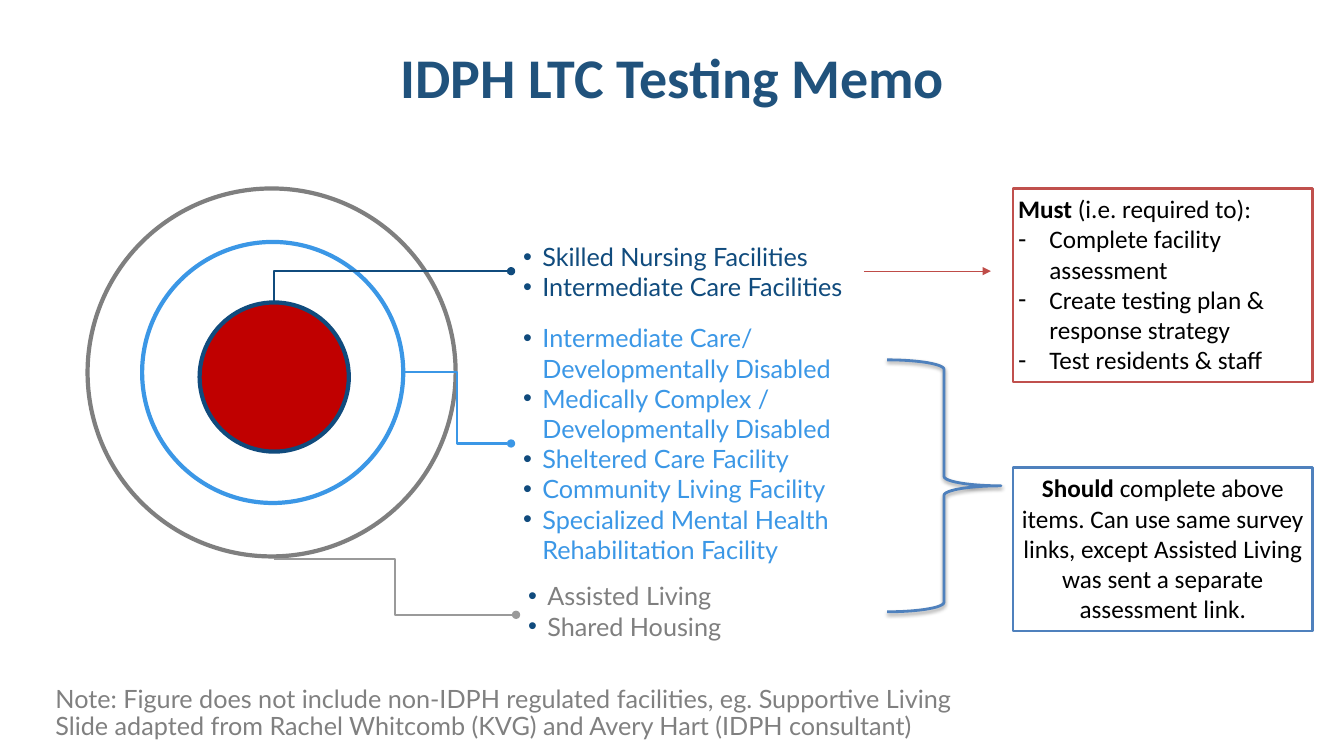
from pptx import Presentation
from pptx.dml.color import RGBColor
from pptx.enum.shapes import MSO_CONNECTOR, MSO_SHAPE
from pptx.enum.text import MSO_ANCHOR, MSO_AUTO_SIZE, PP_ALIGN
from pptx.oxml.ns import qn
from pptx.util import Inches, Pt
from lxml.etree import SubElement

WIDTH, HEIGHT = Inches(13.33), Inches(7.5)
COLORS = {
    "title": "20527C", "navy": "104B7D", "sky": "3B97E6", "gray": "7F7F7F",
    "pale": "9A9A9A", "note": "808080", "core": "C00000", "arrow": "BF4C48",
    "must": "C0504D", "should": "4F81BD", "black": "000000", "white": "FFFFFF",
}
LABEL_LEFT, SIDE_LEFT, SIDE_WIDTH = 38.03, 75.38, 22.28
CENTER, SKILLED_LEVEL = 20.4, 35.87


def color(name):
    return RGBColor.from_string(COLORS[name])


def across(percent):
    return round(WIDTH * percent / 100)


def down(percent):
    return round(HEIGHT * percent / 100)


def place(left, top, width, height):
    return across(left), down(top), across(width), down(height)


def add_outline(page, kind, area, line, weight, fill=None):
    shape = page.shapes.add_shape(kind, *area)
    shape.shadow.inherit = False
    if fill:
        shape.fill.solid()
        shape.fill.fore_color.rgb = color(fill)
    else:
        shape.fill.background()
    shape.line.color.rgb = color(line)
    shape.line.width = Pt(weight)
    return shape


def add_ring(page, center, middle, diameter, line, fill=None):
    size = down(diameter)
    area = across(center) - size // 2, down(middle) - size // 2, size, size
    add_outline(page, MSO_SHAPE.OVAL, area, line, 3, fill)


def add_line(page, kind, start, finish, line, weight, **ends):
    connector = page.shapes.add_connector(
        kind, across(start[0]), down(start[1]), across(finish[0]), down(finish[1]))
    connector.line.color.rgb = color(line)
    connector.line.width = Pt(weight)
    for end, style in ends.items():
        SubElement(connector.line._get_or_add_ln(), qn(f"a:{end}End"), type=style)
    SubElement(connector.element.spPr, qn("a:effectLst"))
    return connector


def set_frame(shape, anchor, insets, grow=True):
    frame = shape.text_frame
    frame.word_wrap = True
    frame.auto_size = MSO_AUTO_SIZE.SHAPE_TO_FIT_TEXT if grow else MSO_AUTO_SIZE.NONE
    frame.vertical_anchor = anchor
    (frame.margin_left, frame.margin_top,
     frame.margin_right, frame.margin_bottom) = [Inches(inset) for inset in insets]
    return frame


def add_bullet(para, mark, indent, tint=None):
    properties = para._p.get_or_add_pPr()
    properties.set("marL", str(Inches(indent)))
    properties.set("indent", str(-Inches(indent)))
    if tint:
        SubElement(SubElement(properties, qn("a:buClr")), qn("a:srgbClr"), val=COLORS[tint])
    SubElement(properties, qn("a:buFont"), typeface="Arial")
    SubElement(properties, qn("a:buChar"), char=mark)


def add_spans(para, spans, font, tint, size=18):
    for text, bold in spans:
        span = para.add_run()
        span.text = text
        span.font.name = font
        span.font.size = Pt(size)
        span.font.bold = bold
        span.font.color.rgb = color(tint)


def next_para(frame, index):
    return frame.add_paragraph() if index else frame.paragraphs[0]


def add_title(page, text):
    box = page.shapes.add_textbox(*place(5.18, 4.4, 89.7, 11.33))
    para = set_frame(box, MSO_ANCHOR.MIDDLE, [0.05] * 4, grow=False).paragraphs[0]
    para.alignment = PP_ALIGN.CENTER
    add_spans(para, [(text, True)], "Calibri", "title", 40)


def add_facilities(page, area, names, tint):
    box = page.shapes.add_textbox(*place(*area))
    frame = set_frame(box, MSO_ANCHOR.MIDDLE, (0.12, 0, 0, 0))
    for index, name in enumerate(names):
        para = next_para(frame, index)
        para.level = 1
        add_bullet(para, "•", 0.19, "navy")
        add_spans(para, [(name, False)], "Lato", tint)


def add_duty(page, top, height, line, lead, rest, alignment, tasks=()):
    area = place(SIDE_LEFT, top, SIDE_WIDTH, height)
    box = add_outline(page, MSO_SHAPE.RECTANGLE, area, line, 2, "white")
    frame = set_frame(box, MSO_ANCHOR.TOP, [0.05] * 4)
    para = frame.paragraphs[0]
    para.alignment = alignment
    add_spans(para, [(lead, True), (rest, False)], "Calibri", "black")
    for task in tasks:
        para = frame.add_paragraph()
        para.alignment = alignment
        add_bullet(para, "-", 0.31)
        add_spans(para, [(task, False)], "Calibri", "black")


def add_brace(page, area, line):
    brace = add_outline(page, MSO_SHAPE.RIGHT_BRACE, place(*area), line, 2)
    effects = brace.element.spPr.find(qn("a:effectLst"))
    shadow = SubElement(effects, qn("a:outerShdw"), blurRad=str(Pt(3)), dist=str(Pt(1.6)),
                        dir="5400000", rotWithShape="0")
    tint = SubElement(shadow, qn("a:srgbClr"), val=COLORS["black"])
    SubElement(tint, qn("a:alpha"), val="38000")


def add_note(page, lines):
    box = page.shapes.add_textbox(*place(4.13, 90.67, 71.25, 7.33))
    frame = set_frame(box, MSO_ANCHOR.BOTTOM, [0] * 4)
    for index, text in enumerate(lines):
        para = next_para(frame, index)
        para.line_spacing = 0.9
        add_spans(para, [(text, False)], "Lato", "note")


def main():
    deck = Presentation()
    deck.slide_width, deck.slide_height = WIDTH, HEIGHT
    page = deck.slides.add_slide(deck.slide_layouts[6])

    add_ring(page, 20.21, 49.27, 48.67, "gray")
    add_title(page, "IDPH LTC Testing Memo")
    add_ring(page, 20.29, 49.27, 34.53, "sky")
    add_ring(page, CENTER, 49.87, 19.73, "navy", "core")

    elbow = MSO_CONNECTOR.ELBOW
    add_line(page, elbow, (LABEL_LEFT, 58.67), (30, 49.2), "sky", 1.5, head="oval")
    add_facilities(page, (LABEL_LEFT, 42.53, 30.53, 32.27), [
        "Intermediate Care/ Developmentally Disabled",
        "Medically Complex / Developmentally Disabled",
        "Sheltered Care Facility",
        "Community Living Facility",
        "Specialized Mental Health Rehabilitation Facility",
    ], "sky")
    add_facilities(page, (LABEL_LEFT, 31.87, 28.65, 8.13), [
        "Skilled Nursing Facilities", "Intermediate Care Facilities"], "navy")
    corner = add_line(page, elbow, (LABEL_LEFT, SKILLED_LEVEL), (CENTER, 40),
                      "navy", 1.5, head="oval")
    corner.element.spPr.find(qn("a:prstGeom")).set("prst", "bentConnector2")
    add_facilities(page, (38.4, 78.27, 17.48, 5.07), [
        "Assisted Living", "Shared Housing"], "gray")
    add_line(page, elbow, (CENTER, 74), (38.4, 81.33), "pale", 1.5, tail="oval")

    add_note(page, [
        "Note: Figure does not include non-IDPH regulated facilities, eg. Supportive Living",
        "Slide adapted from Rachel Whitcomb (KVG) and Avery Hart (IDPH consultant)",
    ])
    add_line(page, MSO_CONNECTOR.STRAIGHT, (64.28, SKILLED_LEVEL), (73.73, SKILLED_LEVEL),
             "arrow", 0.75, tail="triangle")
    add_duty(page, 24.93, 25.6, "must", "Must", " (i.e. required to):", PP_ALIGN.LEFT, [
        "Complete facility assessment",
        "Create testing plan & response strategy",
        "Test residents & staff",
    ])
    add_duty(page, 61.87, 21.6, "should", "Should",
             " complete above items. Can use same survey links, except Assisted Living"
             " was sent a separate assessment link.", PP_ALIGN.CENTER)
    add_brace(page, (66, 47.6, 8.48, 33.33), "should")
    deck.save("out.pptx")


if __name__ == "__main__":
    main()
